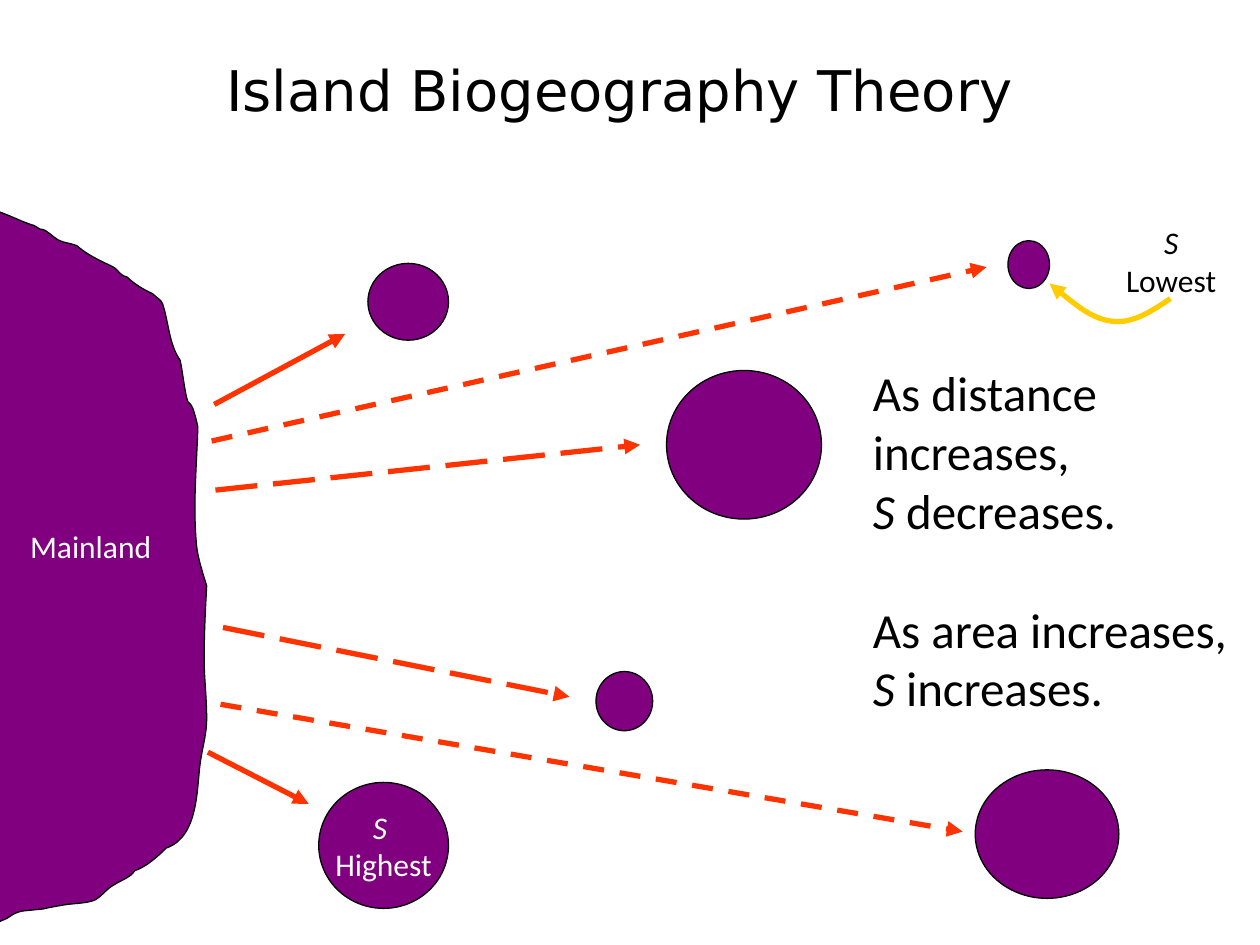
from dataclasses import dataclass

from lxml.etree import SubElement
from pptx import Presentation
from pptx.dml.color import RGBColor
from pptx.enum.dml import MSO_LINE
from pptx.enum.shapes import MSO_CONNECTOR, MSO_SHAPE
from pptx.enum.text import MSO_ANCHOR, MSO_AUTO_SIZE, PP_ALIGN
from pptx.oxml.ns import qn
from pptx.util import Inches, Pt


@dataclass(frozen=True)
class Theme:
    land: str = "800080"
    ink: str = "000000"
    light: str = "FFFFFF"
    dispersal: str = "FF3300"
    pointer: str = "FFCC00"
    body_font: str = "Calibri"
    title_font: str = "DejaVu Sans"
    label_size: int = 18
    rule_size: int = 28
    title_size: int = 32
    outline: float = 0.75
    arrow: float = 3


THEME = Theme()

# Island ellipses: left, top, width, height
ISLANDS = [
    (5.29, 2.94, 1.23, 1.18),
    (4.73, 5.33, 0.45, 0.47),
    (7.74, 6.11, 1.14, 1.02),
    (8, 1.91, 0.33, 0.38),
    (2.92, 2.09, 0.64, 0.61),
]
RICHEST_ISLAND = (2.53, 6.21, 1.03, 1)

# Dispersal routes: start, end, dash (longer distance, shorter dashes)
ROUTES = [
    ((1.7, 3.21), (2.74, 2.65), None),
    ((1.65, 5.97), (2.45, 6.38), None),
    ((1.71, 3.89), (5.08, 3.53), MSO_LINE.LONG_DASH),
    ((1.77, 4.98), (4.52, 5.53), MSO_LINE.LONG_DASH),
    ((1.75, 5.59), (7.64, 6.6), MSO_LINE.DASH),
    ((1.68, 3.5), (7.83, 2.12), MSO_LINE.DASH),
]

# Curves: a start point, then two control points and an end point per row
COAST_START = (-0.01, 1.68)
COAST = [
    (0.08, 1.71, 0.17, 1.76, 0.27, 1.79),
    (0.29, 1.8, 0.3, 1.81, 0.32, 1.82),
    (0.33, 1.82, 0.35, 1.82, 0.36, 1.83),
    (0.41, 1.86, 0.45, 1.91, 0.5, 1.92),
    (0.58, 1.94, 0.55, 1.93, 0.61, 1.95),
    (0.7, 2.03, 0.8, 2.07, 0.9, 2.12),
    (0.95, 2.15, 0.94, 2.18, 1.01, 2.2),
    (1.06, 2.25, 1.14, 2.3, 1.21, 2.33),
    (1.24, 2.36, 1.28, 2.38, 1.29, 2.41),
    (1.34, 2.56, 1.34, 2.73, 1.43, 2.86),
    (1.45, 2.96, 1.46, 3.06, 1.48, 3.15),
    (1.5, 3.23, 1.49, 3.16, 1.53, 3.24),
    (1.55, 3.3, 1.56, 3.34, 1.57, 3.39),
    (1.56, 3.72, 1.53, 4.01, 1.56, 4.33),
    (1.57, 4.43, 1.61, 4.55, 1.64, 4.65),
    (1.63, 4.84, 1.62, 5.03, 1.62, 5.23),
    (1.62, 5.38, 1.64, 5.54, 1.64, 5.7),
    (1.64, 5.83, 1.61, 5.91, 1.59, 6.05),
    (1.56, 6.25, 1.58, 6.64, 1.32, 6.73),
    (1.25, 6.8, 1.16, 6.88, 1.07, 6.91),
    (1.03, 6.97, 0.97, 6.98, 0.91, 7.02),
    (0.85, 7.05, 0.82, 7.1, 0.76, 7.14),
    (0.7, 7.17, 0.58, 7.17, 0.52, 7.18),
    (0.22, 7.23, 0.48, 7.2, 0.18, 7.23),
    (0.09, 7.25, 0.1, 7.27, 0.03, 7.3),
    (0, 7.32, -0.08, 7.33, -0.08, 7.33),
]
POINTER_START = (9.29, 2.37)
POINTER = [
    (9.14, 2.47, 8.99, 2.57, 8.83, 2.55),
    (8.67, 2.53, 8.5, 2.39, 8.33, 2.25),
]


def rgb(value):
    return RGBColor.from_string(value)


def style_line(shape, color, width, dash=None, arrow=False):
    line = shape.line
    line.color.rgb = rgb(color)
    line.width = Pt(width)
    if dash:
        line.dash_style = dash
    if arrow:
        SubElement(line._get_or_add_ln(), qn("a:tailEnd"), type="triangle")


def style_land(shape):
    shape.shadow.inherit = False
    shape.fill.solid()
    shape.fill.fore_color.rgb = rgb(THEME.land)
    style_line(shape, THEME.ink, THEME.outline)


def write(shape, lines, size, color=THEME.ink, font=THEME.body_font,
          align=PP_ALIGN.LEFT, anchor=MSO_ANCHOR.TOP, wrap=False):
    """Fill the frame; each line is a list of (text, italic) runs."""
    frame = shape.text_frame
    settings = {"word_wrap": wrap, "vertical_anchor": anchor}
    for name, value in settings.items():
        setattr(frame, name, value)
    look = {"name": font, "size": Pt(size)}
    for index, runs in enumerate(lines):
        paragraph = frame.add_paragraph() if index else frame.paragraphs[0]
        paragraph.alignment = align
        for text, italic in runs:
            run = paragraph.add_run()
            run.text = text
            for name, value in {**look, "italic": italic}.items():
                setattr(run.font, name, value)
            run.font.color.rgb = rgb(color)
    return frame


def add_text(slide, box, lines, size, grow=True, **options):
    shape = slide.shapes.add_textbox(*map(Inches, box))
    frame = write(shape, lines, size, **options)
    if grow:
        frame.auto_size = MSO_AUTO_SIZE.SHAPE_TO_FIT_TEXT
    return frame


def add_island(slide, box):
    island = slide.shapes.add_shape(MSO_SHAPE.OVAL, *map(Inches, box))
    style_land(island)
    return island


def add_route(slide, start, end, dash):
    route = slide.shapes.add_connector(
        MSO_CONNECTOR.STRAIGHT, *map(Inches, start + end))
    style_line(route, THEME.dispersal, THEME.arrow, dash, arrow=True)
    SubElement(route._element.spPr, qn("a:effectLst"))


def add_curve(slide, start, segments):
    """Draw an open outline, joining each three points into one cubic curve."""
    points = [tuple(map(Inches, row[i:i + 2])) for row in segments for i in (0, 2, 4)]
    builder = slide.shapes.build_freeform(*map(Inches, start))
    builder.add_line_segments(points, close=False)
    curve = builder.convert_to_shape()
    steps = list(curve._element.iter(qn("a:lnTo")))
    for first, second, end in zip(steps[::3], steps[1::3], steps[2::3]):
        outline = first.getparent()
        cubic = SubElement(outline, qn("a:cubicBezTo"))
        for step in (first, second, end):
            cubic.append(step[0])
            outline.remove(step)
    return curve


def main():
    prs = Presentation()
    prs.slide_width, prs.slide_height = Inches(10), Inches(7.5)
    slide = prs.slides.add_slide(prs.slide_layouts[6])
    centred = {"align": PP_ALIGN.CENTER}
    middle = {**centred, "anchor": MSO_ANCHOR.MIDDLE}

    # Islands
    for box in ISLANDS:
        add_island(slide, box)
    write(add_island(slide, RICHEST_ISLAND), [[("S ", True)], [("Highest", False)]],
          THEME.label_size, color=THEME.light, **middle)

    # Mainland
    style_land(add_curve(slide, COAST_START, COAST))
    add_text(slide, (0.14, 4.13, 1.17, 0.4), [[("Mainland", False)]],
             THEME.label_size, color=THEME.light)

    # Dispersal routes
    for start, end, dash in ROUTES:
        add_route(slide, start, end, dash)

    # Poorest island
    add_text(slide, (8.83, 1.72, 0.93, 0.71), [[("S", True)], [("Lowest", False)]],
             THEME.label_size, **centred)
    pointer = add_curve(slide, POINTER_START, POINTER)
    pointer.shadow.inherit = False
    pointer.fill.background()
    style_line(pointer, THEME.pointer, THEME.arrow, arrow=True)

    # Rules of the theory
    rules = add_text(slide, (6.83, 2.83, 3.17, 2.93), [
        [("As distance increases,", False)],
        [("S ", True), ("decreases.", False)],
        [("As area increases,", False)],
        [("S", True), (" increases.", False)],
    ], THEME.rule_size, wrap=True)
    rules.paragraphs[2].space_before = Pt(THEME.rule_size * 1.22)

    # Title
    add_text(slide, (0.42, 0.08, 9, 1.25), [[("Island Biogeography Theory", False)]],
             THEME.title_size, grow=False, font=THEME.title_font, wrap=True, **middle)

    prs.save("out.pptx")


if __name__ == "__main__":
    main()
